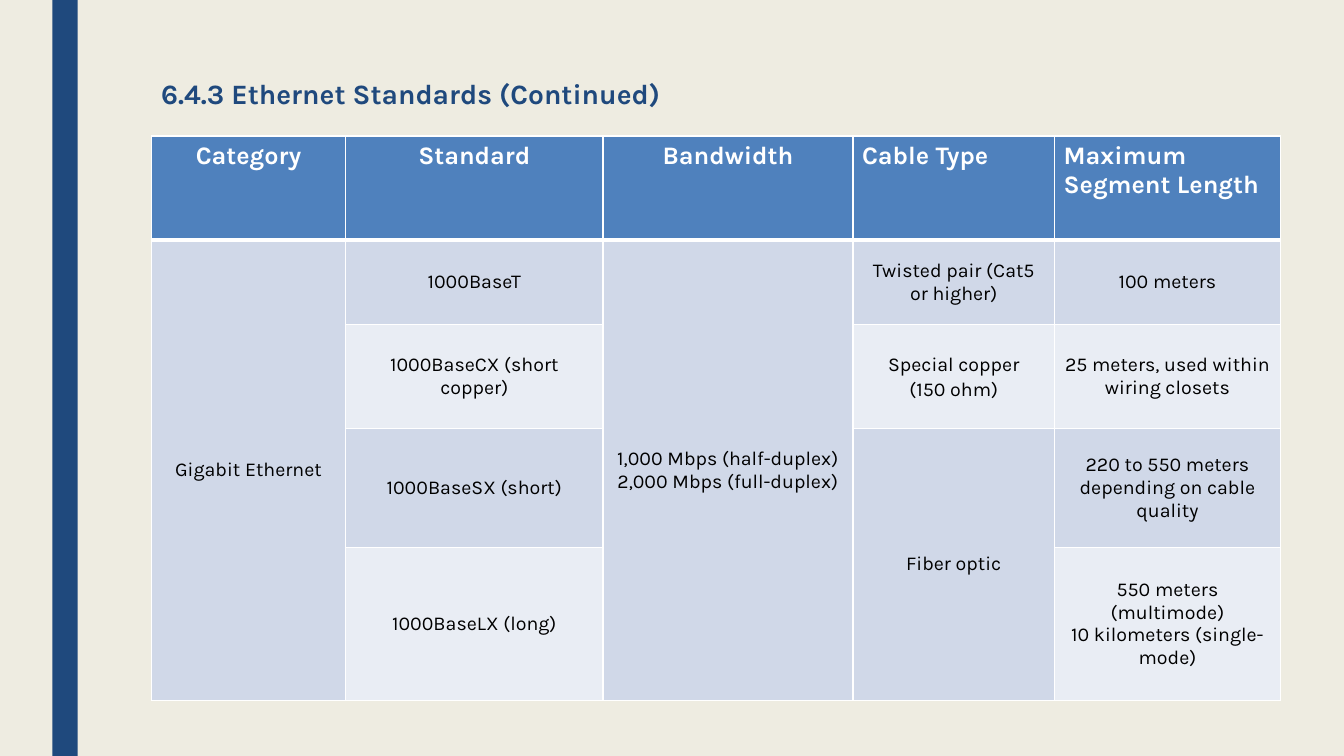
from dataclasses import dataclass

from lxml import etree
from pptx import Presentation
from pptx import util as u
from pptx.dml import color
from pptx.enum import shapes, text
from pptx.oxml import ns


@dataclass(frozen=True)
class Theme:
    font: str = "Karla"
    page: str = "EEECE1"
    navy: str = "1F497D"
    header: str = "4F81BD"
    bands: tuple = ("D0D8E8", "E9EDF4")
    white: str = "FFFFFF"
    black: str = "000000"
    title_size: int = 20
    header_size: int = 18
    body_size: int = 14
    rule: int = 1
    heavy_rule: int = 3


THEME = Theme()

COLUMNS = (1.93, 2.55, 2.48, 2, 2.24)
ROWS = (1.03, 0.84, 1.03, 1.18, 1.52)
HEADERS = ("Category", "Standard", "Bandwidth", "Cable Type", "Maximum Segment Length")
LEFT_HEADERS = ("Cable Type", "Maximum Segment Length")
# None marks a cell that continues the one above it
STANDARDS = (
    ("Gigabit Ethernet", "1000BaseT", "1,000 Mbps (half-duplex)\n2,000 Mbps (full-duplex)",
     "Twisted pair (Cat5 or higher)", "100 meters"),
    (None, "1000BaseCX (short copper)", None,
     "Special copper (150 ohm)", "25 meters, used within wiring closets"),
    (None, "1000BaseSX (short)", None,
     "Fiber optic", "220 to 550 meters depending on cable quality"),
    (None, "1000BaseLX (long)", None,
     None, "550 meters (multimode)\n10 kilometers (single-mode)"),
)
ROOMY_CELL = "Special copper (150 ohm)"


def rgb(value):
    return color.RGBColor.from_string(value)


def style_font(para, size, ink, bold):
    font = para.font
    font.name, font.size, font.bold = THEME.font, u.Pt(size), bold
    font.color.rgb = rgb(ink)


def draw_side_bar(page, left, top, width, height):
    bar = page.shapes.add_shape(shapes.MSO_SHAPE.RECTANGLE, u.Inches(left), u.Inches(top),
                                u.Inches(width), u.Inches(height))
    bar.shadow.inherit = False
    bar.fill.solid()
    bar.fill.fore_color.rgb = rgb(THEME.navy)
    bar.line.fill.background()


def draw_title(page, left, top, width, height):
    box = page.shapes.add_textbox(u.Inches(left), u.Inches(top),
                                  u.Inches(width), u.Inches(height))
    frame = box.text_frame
    frame.word_wrap = True
    para = frame.paragraphs[0]
    para.text = "6.4.3 Ethernet Standards (Continued)"
    para.line_spacing = 0.89
    style_font(para, THEME.title_size, THEME.navy, True)


def set_borders(cell, top, bottom):
    properties = cell._tc.get_or_add_tcPr()
    widths = {"a:lnL": THEME.rule, "a:lnR": THEME.rule, "a:lnT": top, "a:lnB": bottom}
    for side, width in widths.items():
        line = etree.SubElement(properties, ns.qn(side), w=str(u.Pt(width)))
        fill = etree.SubElement(line, ns.qn("a:solidFill"))
        etree.SubElement(fill, ns.qn("a:srgbClr"), val=THEME.white)


def style_cell(cell, row):
    """Set the fill, borders and margins that depend on the row."""
    set_borders(cell,
                THEME.heavy_rule if row == 1 else THEME.rule,
                THEME.heavy_rule if row == 0 else THEME.rule)
    cell.fill.solid()
    cell.fill.fore_color.rgb = rgb(THEME.bands[(row - 1) % 2] if row else THEME.header)
    cell.margin_left = cell.margin_right = u.Inches(0.09)
    cell.margin_top = cell.margin_bottom = u.Inches(0.05)


def write_cell(cell, row, words):
    para = cell.text_frame.paragraphs[0]
    para.text = words
    left_aligned = words in LEFT_HEADERS
    para.alignment = text.PP_ALIGN.LEFT if left_aligned else text.PP_ALIGN.CENTER
    if row == 0:
        style_font(para, THEME.header_size, THEME.white, True)
        return
    style_font(para, THEME.body_size, THEME.black, False)
    cell.vertical_anchor = text.MSO_ANCHOR.MIDDLE
    if words == ROOMY_CELL:
        cell.margin_left = cell.margin_right = u.Inches(0.19)
        cell.margin_top = cell.margin_bottom = u.Inches(0.1)
        para.line_spacing = 1.07
        para.space_after = u.Pt(3.8)


def draw_standards_table(page, left, top, width, height):
    table = page.shapes.add_table(len(ROWS), len(COLUMNS), u.Inches(left), u.Inches(top),
                                  u.Inches(width), u.Inches(height)).table
    for column, share in zip(table.columns, COLUMNS):
        column.width = u.Inches(width * share / sum(COLUMNS))
    for line, share in zip(table.rows, ROWS):
        line.height = u.Inches(height * share / sum(ROWS))

    content = (HEADERS,) + STANDARDS
    for row, entries in enumerate(content):
        for column, words in enumerate(entries):
            cell = table.cell(row, column)
            style_cell(cell, row)
            if words:
                write_cell(cell, row, words)

    # Merge each entry with the continued cells below it
    for column in range(len(COLUMNS)):
        continued = [row for row, entries in enumerate(content) if entries[column] is None]
        if continued:
            table.cell(continued[0] - 1, column).merge(table.cell(continued[-1], column))


def build_standards_slide(deck):
    page = deck.slides.add_slide(deck.slide_layouts[6])
    page.background.fill.solid()
    page.background.fill.fore_color.rgb = rgb(THEME.page)
    draw_side_bar(page, 0.52, 0, 0.25, 7.5)
    draw_title(page, 1.5, 0.75, 10.5, 0.5)
    draw_standards_table(page, 1.5, 1.35, 11.2, 5.6)


def main():
    deck = Presentation()
    deck.slide_width, deck.slide_height = u.Inches(13.33), u.Inches(7.5)
    build_standards_slide(deck)
    deck.save("out.pptx")


if __name__ == "__main__":
    main()
